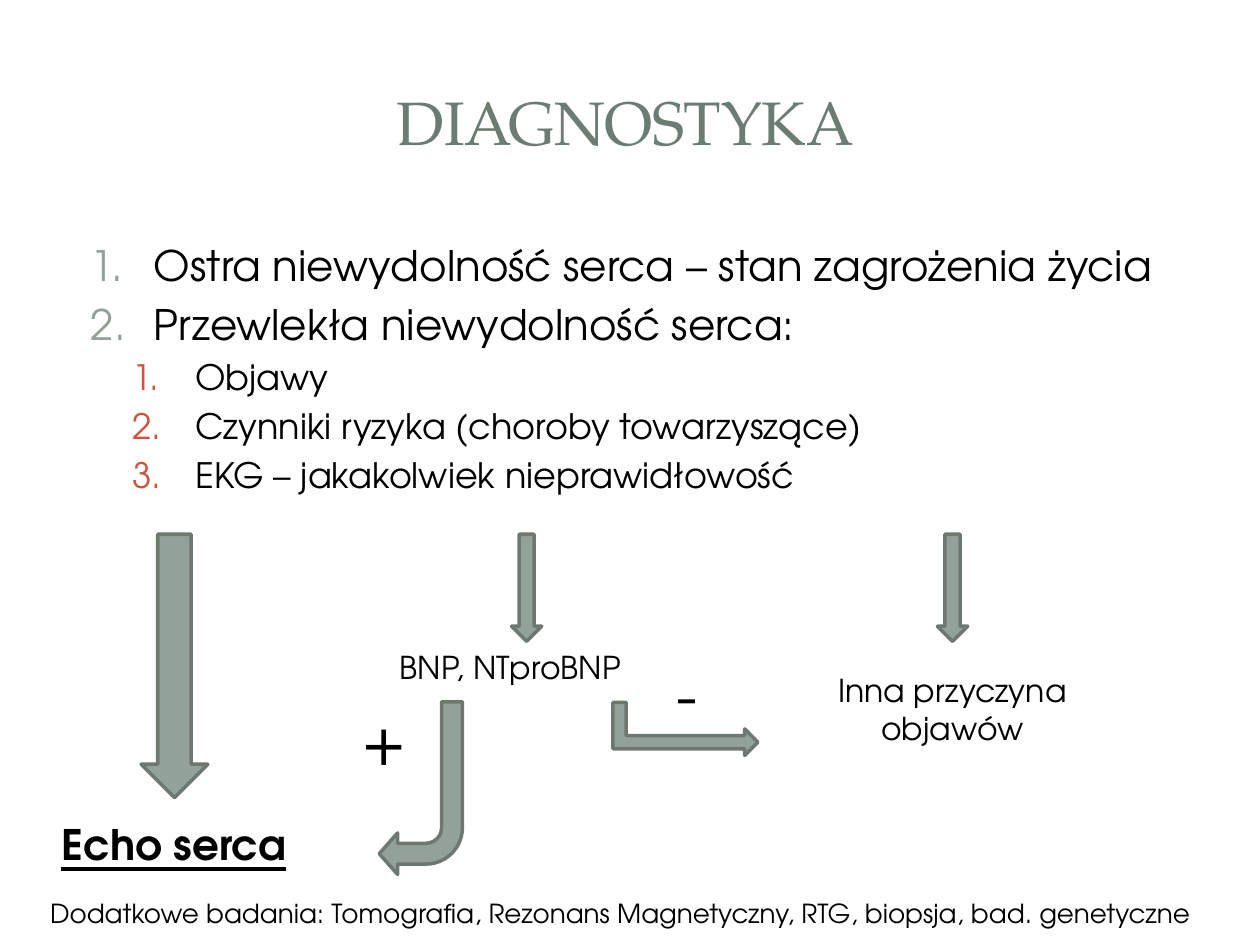
import pptx
import pptx.dml.color
import pptx.enum.shapes
import pptx.enum.text
import pptx.oxml.ns
import pptx.util
from lxml import etree
from pptx.util import Inches

RGBColor = pptx.dml.color.RGBColor
SHAPE = pptx.enum.shapes.MSO_SHAPE
ALIGN = pptx.enum.text.PP_ALIGN
ANCHOR = pptx.enum.text.MSO_ANCHOR
qn = pptx.oxml.ns.qn

BLACK = RGBColor(0x00, 0x00, 0x00)
TITLE_GREEN = RGBColor(0x6B, 0x7D, 0x72)
SAGE = RGBColor(0x93, 0xA2, 0x99)
DARK_SAGE = RGBColor(0x6D, 0x78, 0x71)
RED = RGBColor(0xCF, 0x54, 0x3F)

HEAD_FONT = "TeX Gyre Pagella"
BODY_FONT = "TeX Gyre Adventor"


def write(p, text, size=18, font=BODY_FONT, color=BLACK, bold=None,
          underline=None, align=None):
    p.alignment = align
    r = p.add_run()
    r.text = text
    r.font.size = pptx.util.Pt(size)
    r.font.name = font
    r.font.color.rgb = color
    r.font.bold = bold
    r.font.underline = underline


def number(p, color, margin, hanging=0.5):
    """Turn a paragraph into an automatically numbered item."""
    pPr = p._p.get_or_add_pPr()
    pPr.set("marL", str(Inches(margin)))
    pPr.set("indent", str(-Inches(hanging)))
    clr = etree.SubElement(pPr, qn("a:buClr"))
    etree.SubElement(clr, qn("a:srgbClr"), val=str(color))
    etree.SubElement(pPr, qn("a:buFont"), typeface=BODY_FONT)
    etree.SubElement(pPr, qn("a:buAutoNum"), type="arabicPeriod")


class SlideBuilder:
    # per list level: text size, number colour, left margin
    LEVELS = [(24, SAGE, 0.62), (20, RED, 0.95)]

    def __init__(self, prs):
        self.s = prs.slides.add_slide(prs.slide_layouts[1])

    def place(self, sp, left, top, width, height):
        sp.left, sp.top = Inches(left), Inches(top)
        sp.width, sp.height = Inches(width), Inches(height)
        tf = sp.text_frame
        tf.word_wrap = True
        tf.auto_size = pptx.enum.text.MSO_AUTO_SIZE.NONE
        return tf

    def title(self, text, *box):
        tf = self.place(self.s.shapes.title, *box)
        tf.vertical_anchor = ANCHOR.MIDDLE
        write(tf.paragraphs[0], text, size=35, font=HEAD_FONT,
              color=TITLE_GREEN, align=ALIGN.CENTER)

    def numbered_list(self, items, *box):
        tf = self.place(self.s.placeholders[1], *box)
        for i, (level, text) in enumerate(items):
            p = tf.add_paragraph() if i else tf.paragraphs[0]
            size, color, margin = self.LEVELS[level]
            p.level = level
            number(p, color, margin)
            write(p, text, size=size)

    def label(self, text, left, top, width, height, **fmt):
        box = [Inches(v) for v in (left, top, width, height)]
        tf = self.s.shapes.add_textbox(*box).text_frame
        tf.word_wrap = True
        write(tf.paragraphs[0], text, align=ALIGN.CENTER, **fmt)

    def arrow(self, kind, left, top, width, height, rotation=0, adjust=()):
        box = [Inches(v) for v in (left, top, width, height)]
        sp = self.s.shapes.add_shape(kind, *box)
        sp.shadow.inherit = False
        sp.rotation = rotation
        for i, value in enumerate(adjust):
            sp.adjustments[i] = value
        sp.fill.solid()
        sp.fill.fore_color.rgb = SAGE
        sp.line.color.rgb = DARK_SAGE
        sp.line.width = pptx.util.Pt(2)


def main():
    prs = pptx.Presentation()
    prs.slide_width, prs.slide_height = Inches(10), Inches(7.5)
    b = SlideBuilder(prs)

    b.title("DIAGNOSTYKA", 0.45, 0.39, 9.03, 1.14)
    b.numbered_list([
        (0, "Ostra niewydolność serca – stan zagrożenia życia"),
        (0, "Przewlekła niewydolność serca:"),
        (1, "Objawy"),
        (1, "Czynniki ryzyka (choroby towarzyszące)"),
        (1, "EKG – jakakolwiek nieprawidłowość"),
    ], 0.5, 1.85, 9, 2.26)

    arrows_top = 4.24
    b.arrow(SHAPE.DOWN_ARROW, 1.12, arrows_top, 0.53, 2.09)
    for left in (4.06, 7.44):
        b.arrow(SHAPE.DOWN_ARROW, left, arrows_top, 0.24, 0.85)
    b.arrow(SHAPE.BENT_UP_ARROW, 5.23, 5.21, 0.42, 1.15, rotation=90)
    b.arrow(SHAPE.BENT_ARROW, 3.01, 5.57, 0.66, 1.37, rotation=180,
            adjust=(0.25, 0.25, 0.22, 0.44))

    b.label("Echo serca", 0.28, 6.45, 2.2, 0.5, size=24, bold=True,
            underline=True)
    b.label("BNP, NTproBNP", 2.95, 5.09, 2.2, 0.4)
    b.label("Inna przyczyna objawów", 6.46, 5.28, 2.2, 0.71)
    b.label("+", 2.67, 5.51, 0.75, 0.71, size=36)
    b.label("-", 5.08, 5.15, 0.75, 0.71, size=36)
    b.label("Dodatkowe badania: Tomografia, Rezonans Magnetyczny, RTG, "
            "biopsja, bad. genetyczne", 0.12, 7.07, 9.61, 0.35, size=15)

    prs.save("out.pptx")


if __name__ == "__main__":
    main()
